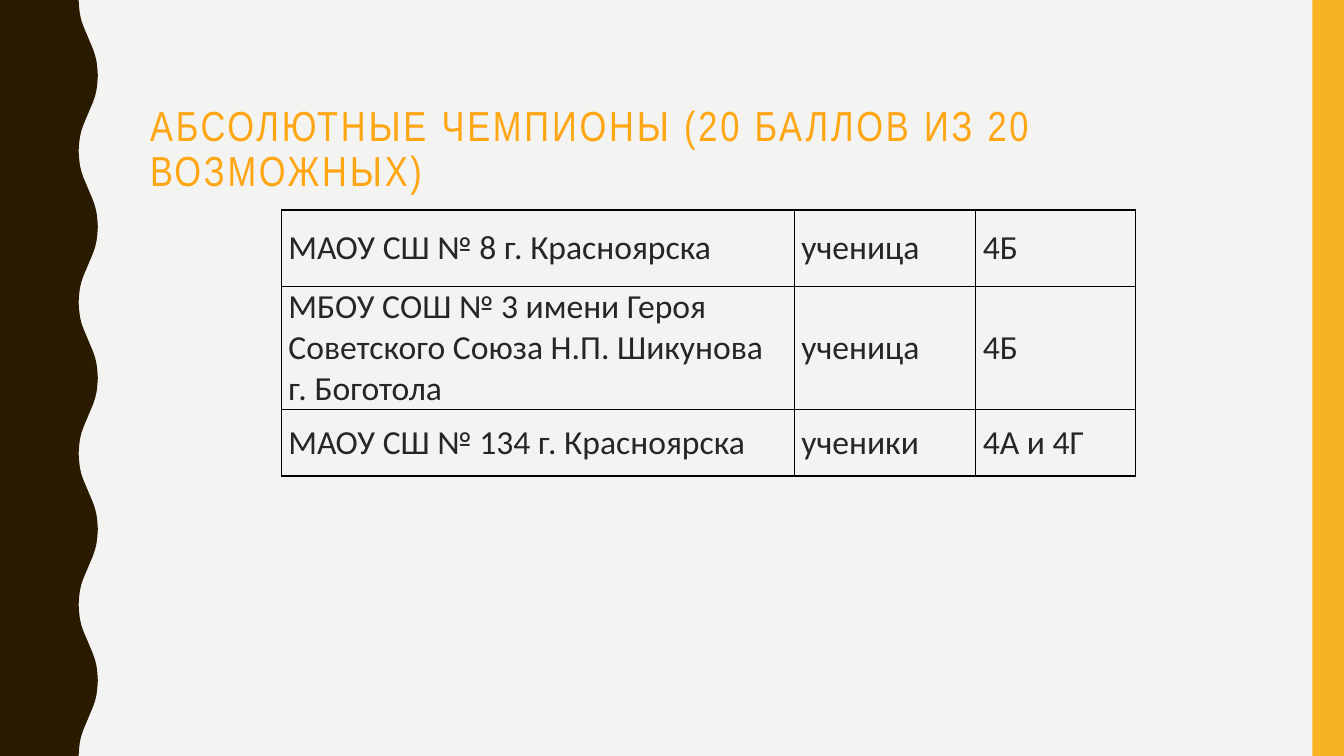
from lxml.etree import SubElement
from pptx import Presentation
from pptx.dml.color import RGBColor
from pptx.enum.shapes import MSO_SHAPE
from pptx.enum.text import MSO_ANCHOR, MSO_AUTO_SIZE, PP_ALIGN
from pptx.oxml.ns import qn
from pptx.util import Pt

PAPER = RGBColor(0xF3, 0xF3, 0xF2)
BROWN = RGBColor(0x2A, 0x1A, 0x00)
AMBER = RGBColor(0xF8, 0xB3, 0x23)
ORANGE = RGBColor(0xFF, 0xA6, 0x15)
INK = RGBColor(0x26, 0x26, 0x26)
BLACK = RGBColor(0x00, 0x00, 0x00)

WIDTH, HEIGHT = 960, 540
WAVE_PERIOD, WAVE_DEPTH = 108, 13.7
QUARTER_WAVE = [(0, 0), (0.3, 5), (0.9, 10), (1.9, 14.4),
                (3.1, 18), (4.3, 21), (5.6, 24), (6.85, 27)]

TITLE = "АБСОЛЮТНЫЕ ЧЕМПИОНЫ (20 БАЛЛОВ ИЗ 20 ВОЗМОЖНЫХ)"
CHAMPIONS = [
    ("МАОУ СШ № 8 г. Красноярска", "ученица", "4Б"),
    ("МБОУ СОШ № 3 имени Героя Советского Союза Н.П. Шикунова г. Боготола",
     "ученица", "4Б"),
    ("МАОУ СШ № 134 г. Красноярска", "ученики", "4А и 4Г"),
]
COLUMN_WIDTHS = [366.5, 129.5, 114]
ROW_HEIGHTS = [54.7, 52.5, 47.5]


def write(tf, text, size, font, color, spacing=None, line_spacing=None):
    """Set the text of a frame and format it."""
    p = tf.paragraphs[0]
    p.alignment = PP_ALIGN.LEFT
    if line_spacing:
        p.line_spacing = line_spacing
    r = p.add_run()
    r.text = text
    r.font.size = Pt(size)
    r.font.name = font
    r.font.color.rgb = color
    if spacing:
        r.font._element.set("spc", str(spacing * 100))


def paint(sp, color):
    """Give a shape a plain fill with no line or shadow."""
    sp.shadow.inherit = False
    sp.fill.solid()
    sp.fill.fore_color.rgb = color
    sp.line.fill.background()


def add_wavy_band(s, x, y, w, h):
    """Draw the left band, whose right edge is a repeated wave."""
    half = WAVE_PERIOD / 2
    rise = QUARTER_WAVE + [(WAVE_DEPTH - dx, half - dy)
                           for dx, dy in QUARTER_WAVE[-2::-1]]
    wave = rise + [(dx, WAVE_PERIOD - dy) for dx, dy in rise[-2::-1]]
    edge = [(x + w - WAVE_DEPTH + dx, y + n * WAVE_PERIOD + dy)
            for n in range(round(h / WAVE_PERIOD)) for dx, dy in wave]
    builder = s.shapes.build_freeform(Pt(x), Pt(y))
    builder.add_line_segments([(Pt(px), Pt(py)) for px, py in edge + [(x, y + h)]])
    paint(builder.convert_to_shape(), BROWN)


def add_side_bar(s, x, y, w, h):
    """Draw the plain bar at the right edge."""
    paint(s.shapes.add_shape(MSO_SHAPE.RECTANGLE, Pt(x), Pt(y), Pt(w), Pt(h)), AMBER)


def add_title(s, x, y, w, h):
    """Place the title in front of the side decoration."""
    sp = s.shapes.title
    sp.left, sp.top, sp.width, sp.height = Pt(x), Pt(y), Pt(w), Pt(h)
    sp.element.getparent().append(sp.element)
    tf = sp.text_frame
    tf.word_wrap = True
    tf.auto_size = MSO_AUTO_SIZE.NONE
    tf.vertical_anchor = MSO_ANCHOR.TOP
    write(tf, TITLE, 30, "Arial Narrow", ORANGE, spacing=2, line_spacing=0.9)


def add_borders(cell):
    """Rule all four sides of a cell."""
    tcPr = cell._tc.get_or_add_tcPr()
    for i, side in enumerate(("lnL", "lnR", "lnT", "lnB")):
        ln = SubElement(tcPr, qn(f"a:{side}"), w=str(Pt(1)))
        tcPr.insert(i, ln)
        fill = SubElement(ln, qn("a:solidFill"))
        SubElement(fill, qn("a:srgbClr"), val=str(BLACK))


def add_champions(s, x, y, w, h):
    """Build the table of schools, pupils and classes."""
    table = s.shapes.add_table(len(CHAMPIONS), len(COLUMN_WIDTHS),
                               Pt(x), Pt(y), Pt(w), Pt(h)).table
    table.first_row = table.horz_banding = False
    for column, width in zip(table.columns, COLUMN_WIDTHS):
        column.width = Pt(width)
    for row, height, texts in zip(table.rows, ROW_HEIGHTS, CHAMPIONS):
        row.height = Pt(height)
        for cell, text in zip(row.cells, texts):
            cell.margin_left = cell.margin_right = Pt(5)
            cell.margin_top = cell.margin_bottom = Pt(0)
            cell.vertical_anchor = MSO_ANCHOR.MIDDLE
            cell.fill.background()
            add_borders(cell)
            write(cell.text_frame, text, 24, "Calibri", INK)


def main():
    """Build the slide and save it."""
    prs = Presentation()
    prs.slide_width, prs.slide_height = Pt(WIDTH), Pt(HEIGHT)
    s = prs.slides.add_slide(prs.slide_layouts[5])
    s.background.fill.solid()
    s.background.fill.fore_color.rgb = PAPER
    add_wavy_band(s, 0, 0, 69.9, HEIGHT)
    add_side_bar(s, 937.5, 0, 22.5, HEIGHT)
    add_title(s, 100, 71.5, 848, 50)
    add_champions(s, 201, 150, sum(COLUMN_WIDTHS), sum(ROW_HEIGHTS))
    prs.save("out.pptx")


if __name__ == "__main__":
    main()
